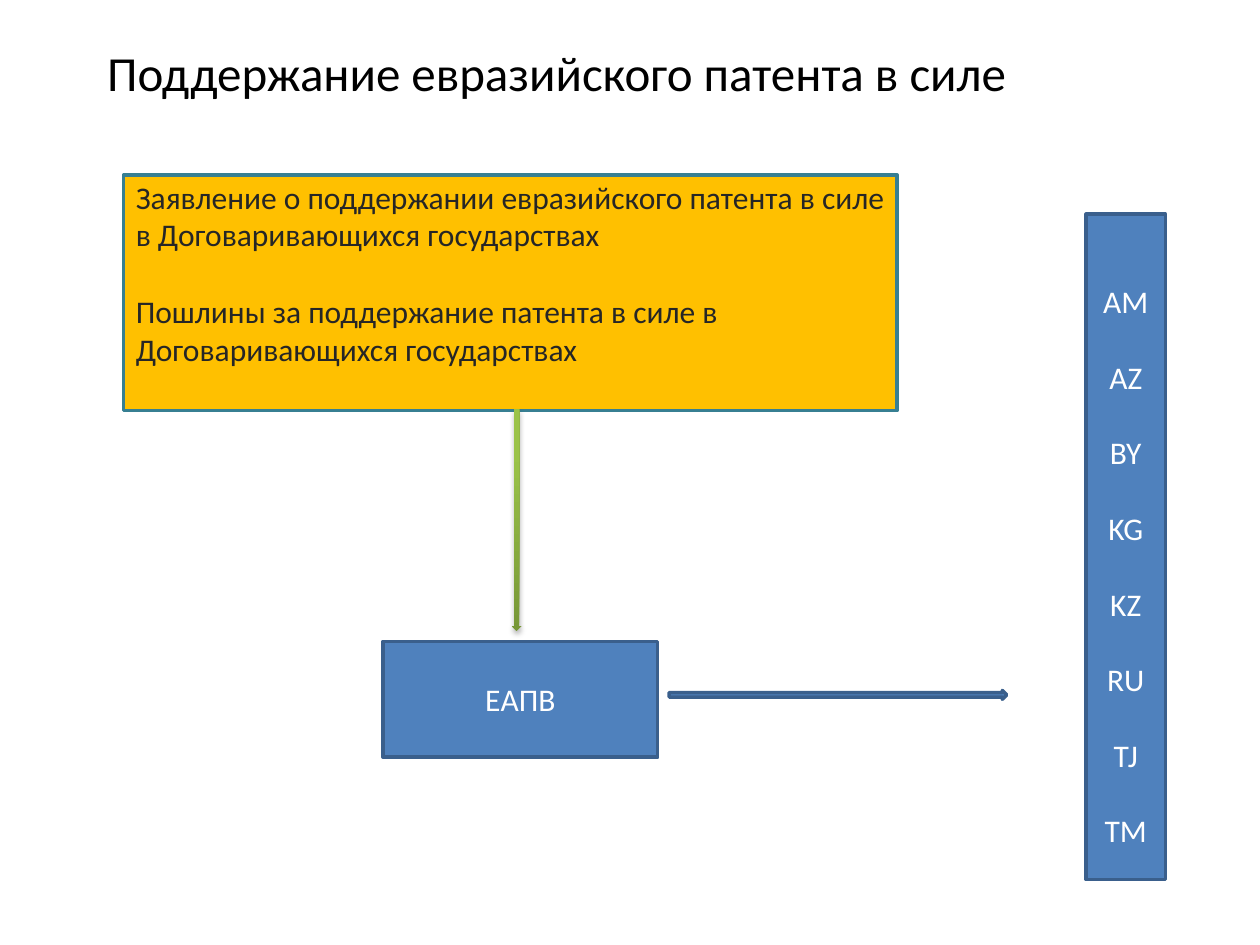
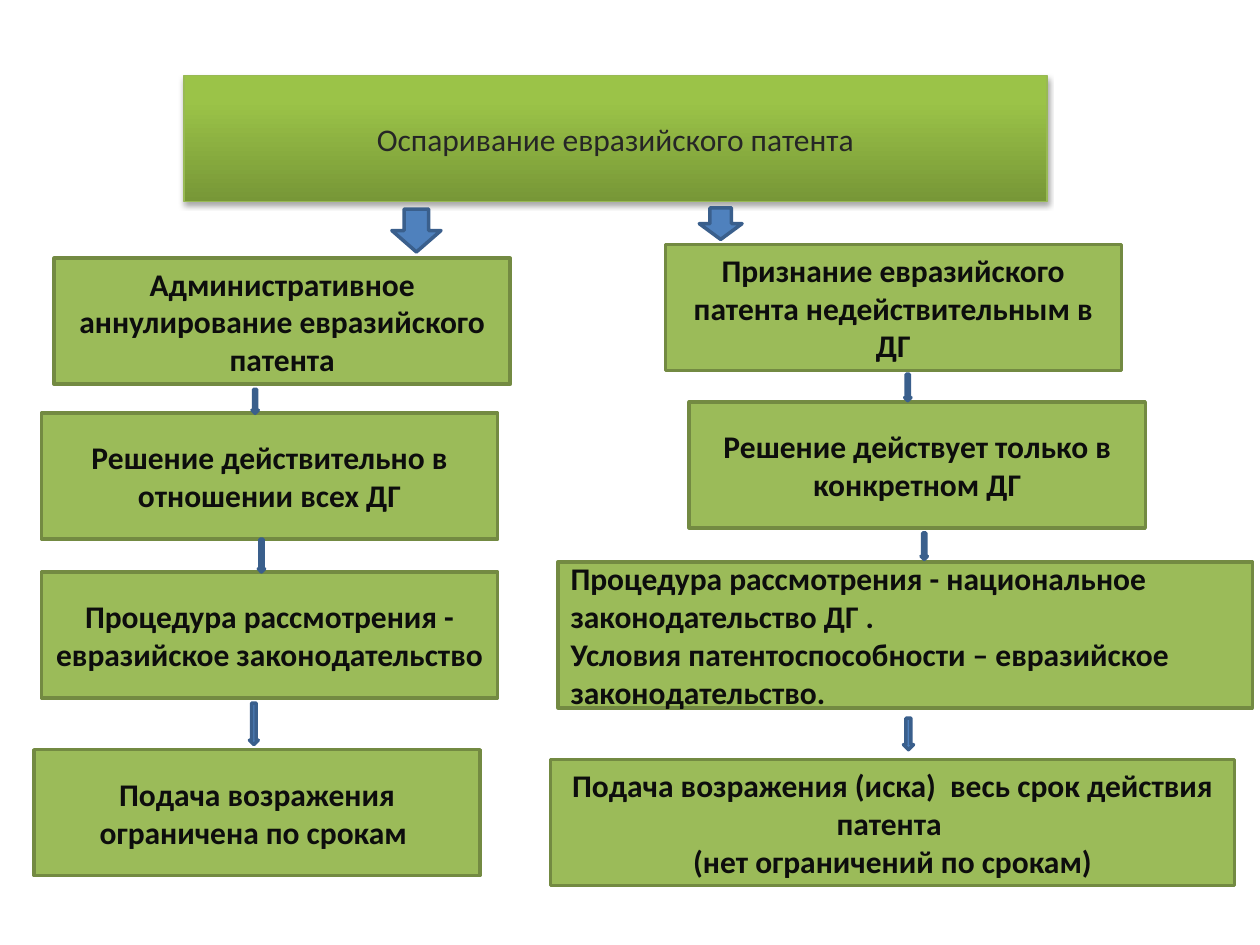
"""Build two slides on keeping a Eurasian patent in force and contesting it."""
from lxml import etree
from pptx import Presentation
from pptx.dml.color import RGBColor
from pptx.enum.shapes import MSO_SHAPE
from pptx.enum.text import MSO_ANCHOR, MSO_AUTO_SIZE, PP_ALIGN
from pptx.oxml.ns import qn
from pptx.util import Inches, Pt

RECT, DOWN, RIGHT = MSO_SHAPE.RECTANGLE, MSO_SHAPE.DOWN_ARROW, MSO_SHAPE.RIGHT_ARROW
LEFT, CENTER = PP_ALIGN.LEFT, PP_ALIGN.CENTER
TOP, MIDDLE = MSO_ANCHOR.TOP, MSO_ANCHOR.MIDDLE
NO_AUTOFIT = MSO_AUTO_SIZE.NONE

BLACK = RGBColor(0x00, 0x00, 0x00)
WHITE = RGBColor(0xFF, 0xFF, 0xFF)
CHARCOAL = RGBColor(0x26, 0x26, 0x26)
INK = RGBColor(0x0D, 0x0D, 0x0D)
AMBER = RGBColor(0xFF, 0xC0, 0x00)
TEAL = RGBColor(0x37, 0x7F, 0x92)
BLUE = RGBColor(0x4F, 0x81, 0xBD)
BLUE_EDGE = RGBColor(0x3A, 0x5F, 0x8C)
GREEN = RGBColor(0x9B, 0xBB, 0x59)
GREEN_EDGE = RGBColor(0x73, 0x8A, 0x42)
BANNER_EDGE = RGBColor(0x98, 0xB9, 0x55)
GRADIENT = ((0, RGBColor(0x77, 0x97, 0x37)), (0.8, RGBColor(0x9B, 0xC3, 0x48)))

FONT = "Calibri"
TITLE_ONLY = 5
STEP_WIDTH, STEP_HEIGHT = 3.62, 1


class Deck:
    """Holds the presentation style and the current slide."""

    def __init__(self):
        self.prs = Presentation()
        self.prs.slide_width, self.prs.slide_height = Inches(10), Inches(7.5)
        self.slide = None

    def add_slide(self):
        self.slide = self.prs.slides.add_slide(self.prs.slide_layouts[TITLE_ONLY])

    def set_text(self, s, paragraphs, color, size=18, bold=False, align=CENTER, anchor=MIDDLE):
        tf = s.text_frame
        tf.text = "\n".join(paragraphs)
        tf.word_wrap, tf.auto_size = True, NO_AUTOFIT
        tf.vertical_anchor = anchor
        for p in tf.paragraphs:
            p.alignment = align
            for r in p.runs:
                r.font.name, r.font.size, r.font.bold = FONT, Pt(size), bold
                r.font.color.rgb = color
        return tf

    def title(self, text, x, y, w, h, color, **style):
        s = self.slide.shapes.title
        s.left, s.top, s.width, s.height = map(Inches, (x, y, w, h))
        self.set_text(s, [text], color, **style)
        return s

    def shape(self, kind, x, y, w, h, fill=BLUE, edge=BLUE_EDGE):
        s = self.slide.shapes.add_shape(kind, *map(Inches, (x, y, w, h)))
        s.shadow.inherit = False
        s.fill.solid()
        s.fill.fore_color.rgb = fill
        s.line.color.rgb, s.line.width = edge, Pt(2)
        return s

    def box(self, paragraphs, x, y, w, h, fill=BLUE, edge=BLUE_EDGE, color=WHITE, **style):
        return self.set_text(self.shape(RECT, x, y, w, h, fill, edge), paragraphs, color, **style)

    def step(self, paragraphs, x, y, w=STEP_WIDTH, h=STEP_HEIGHT, align=CENTER):
        self.box(paragraphs, x, y, w, h, GREEN, GREEN_EDGE, INK, bold=True, align=align)

    def glossy(self, s):
        s.fill.gradient()
        s.fill.gradient_angle = 90
        for stop, (position, color) in zip(s.fill.gradient_stops, GRADIENT):
            stop.position, stop.color.rgb = position, color
        s.shadow.inherit = False
        effects = s.element.spPr.find(qn("a:effectLst"))
        shadow = etree.SubElement(effects, qn("a:outerShdw"), blurRad="40000",
                                  dist="23000", dir="5400000", rotWithShape="0")
        color = etree.SubElement(shadow, qn("a:srgbClr"), val=str(BLACK))
        etree.SubElement(color, qn("a:alpha"), val="35000")


def maintenance_slide(deck):
    deck.add_slide()
    deck.title("Поддержание евразийского патента в силе", 0.75, 0.29, 8.27, 1.04,
               BLACK, size=28, align=LEFT, anchor=TOP)
    tf = deck.box(
        ["Заявление о поддержании евразийского патента в силе в Договаривающихся государствах",
         "Пошлины за поддержание патента в силе в Договаривающихся государствах"],
        0.98, 1.39, 6.14, 1.87, AMBER, TEAL, CHARCOAL, align=LEFT, anchor=TOP)
    tf.margin_top = Inches(0.02)
    tf.paragraphs[1].space_before = Pt(22)

    request_arrow = deck.shape(DOWN, 4.06, 3.25, 0.08, 1.76)
    request_arrow.line.fill.background()
    deck.glossy(request_arrow)
    deck.box(["ЕАПВ"], 3.04, 5.09, 2.18, 0.92)
    deck.shape(RIGHT, 5.31, 5.48, 2.68, 0.07)
    states = deck.box("AM AZ BY KG KZ RU TJ TM".split(), 8.62, 1.7, 0.63, 5.28)
    for p in states.paragraphs:
        p.line_spacing = 2.0


def contest_slide(deck):
    deck.add_slide()
    banner = deck.title("Оспаривание евразийского патента", 1.46, 0.6, 6.85, 1, CHARCOAL)
    deck.glossy(banner)
    banner.line.color.rgb, banner.line.width = BANNER_EDGE, Pt(0.75)

    deck.step(["Административное аннулирование евразийского патента"], 0.43, 2.05)
    deck.step(["Решение действительно в отношении всех ДГ"], 0.33, 3.28)
    deck.step(["Процедура рассмотрения - евразийское законодательство"], 0.33, 4.54)
    deck.step(["Подача возражения ограничена по срокам "], 0.27, 5.95, 3.54)

    deck.step(["Признание евразийского патента недействительным в ДГ"], 5.28, 1.94)
    deck.step(["Решение действует только в конкретном ДГ"], 5.47, 3.19)
    deck.step(["Процедура рассмотрения - национальное законодательство ДГ .",
               "Условия патентоспособности – евразийское законодательство."],
              4.43, 4.46, 5.51, 1.16, align=LEFT)
    deck.step(["Подача возражения (иска)  весь срок действия патента ",
               "(нет ограничений по срокам)"], 4.37, 6.03, 5.43)

    administrative_arrows = [(3.11, 1.66, 0.39, 0.34), (2, 3.09, 0.05, 0.19),
                             (2.05, 4.28, 0.05, 0.26), (1.98, 5.58, 0.07, 0.33)]
    national_arrows = [(5.55, 1.65, 0.34, 0.25), (7.18, 2.97, 0.05, 0.21),
                       (7.31, 4.23, 0.05, 0.21), (7.17, 5.7, 0.08, 0.25)]
    for place in administrative_arrows + national_arrows:
        deck.shape(DOWN, *place)


def main():
    deck = Deck()
    maintenance_slide(deck)
    contest_slide(deck)
    deck.prs.save("out.pptx")


if __name__ == "__main__":
    main()
